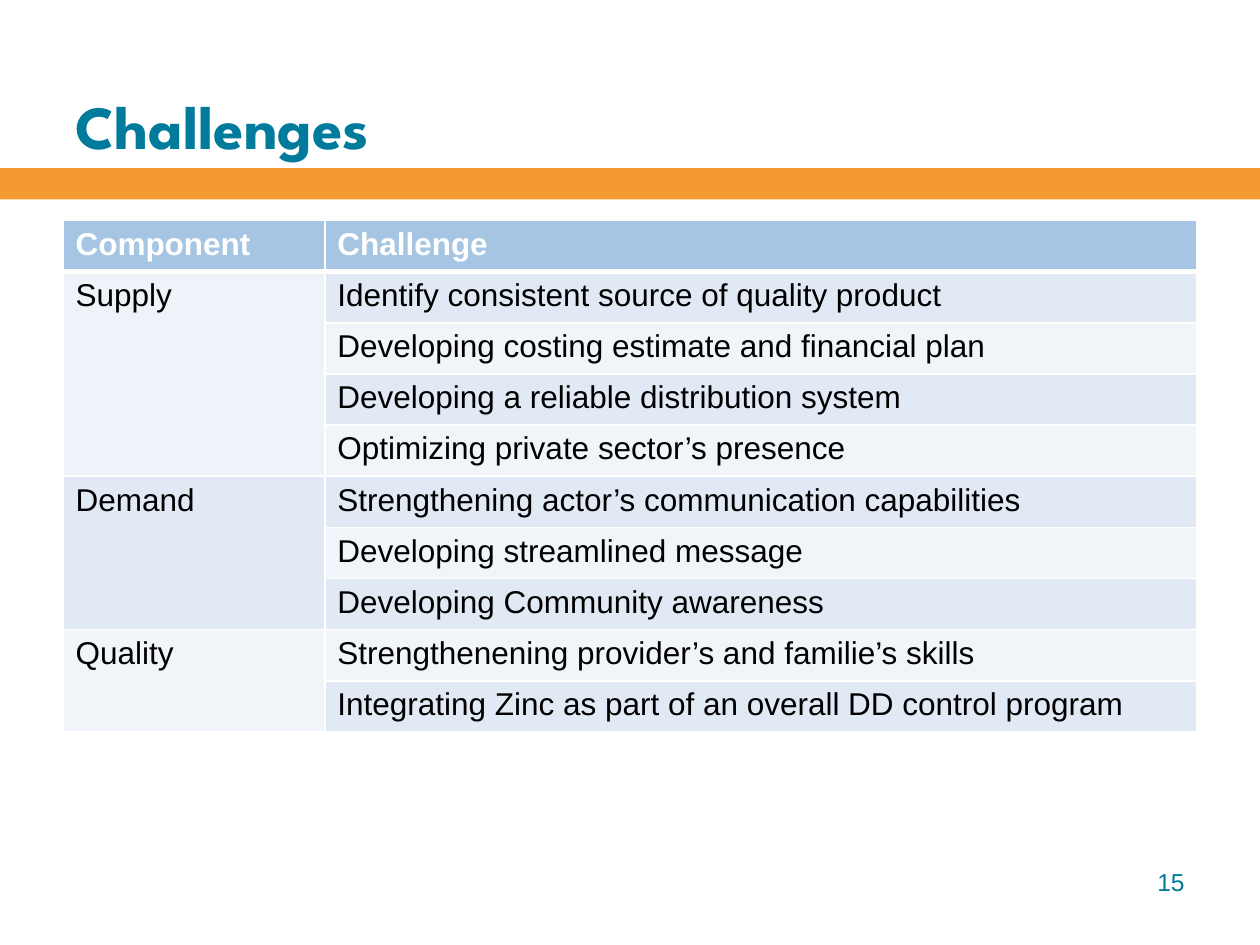
from dataclasses import dataclass

import pptx
import pptx.dml.color
import pptx.enum.shapes
import pptx.enum.text
import pptx.oxml
import pptx.oxml.ns
import pptx.util

Pt = pptx.util.Pt
RGBColor = pptx.dml.color.RGBColor
Anchor = pptx.enum.text.MSO_ANCHOR
Align = pptx.enum.text.PP_ALIGN

WHITE = RGBColor(0xFF, 0xFF, 0xFF)
BLACK = RGBColor(0x00, 0x00, 0x00)
TEAL = RGBColor(0x00, 0x7B, 0x9B)
ORANGE = RGBColor(0xF3, 0x9B, 0x31)
HEADER_BLUE = RGBColor(0xA6, 0xC5, 0xE2)
SUPPLY_BLUE = RGBColor(0xED, 0xF3, 0xF9)
DARK_BAND = RGBColor(0xE1, 0xEA, 0xF4)
LIGHT_BAND = RGBColor(0xF1, 0xF5, 0xFA)

TITLE_FORMAT = {"name": "League Spartan", "size": Pt(35), "bold": True}
NUMBER_FORMAT = {"name": "Arial", "size": Pt(14), "bold": False}
HEADER_FORMAT = {"name": "Arial", "size": Pt(18), "bold": True}
BODY_FORMAT = {**HEADER_FORMAT, "bold": False}

ROW_HEIGHT = 29.23
COLUMN_WIDTHS = (149.6, 498.4)


@dataclass(frozen=True)
class Component:
    name: str
    fill: RGBColor
    challenges: tuple[str, ...]


HEADINGS = ("Component", "Challenge")
COMPONENTS = (
    Component("Supply", SUPPLY_BLUE, (
        "Identify consistent source of quality product",
        "Developing costing estimate and financial plan",
        "Developing a reliable distribution system",
        "Optimizing private sector’s presence",
    )),
    Component("Demand", DARK_BAND, (
        "Strengthening actor’s communication capabilities",
        "Developing streamlined message",
        "Developing Community awareness",
    )),
    Component("Quality", LIGHT_BAND, (
        "Strengthenening provider’s and familie’s skills",
        "Integrating Zinc as part of an overall DD control program",
    )),
)


def write_text(frame, text: str, text_format: dict, color: RGBColor) -> None:
    para = frame.paragraphs[0]
    span = para.add_run()
    span.text = text
    for name, value in text_format.items():
        setattr(span.font, name, value)
    span.font.color.rgb = color


def add_text_box(page, place: tuple[float, ...], text: str, text_format: dict,
                 anchor: Anchor, align: Align) -> None:
    box = page.shapes.add_textbox(*map(Pt, place))
    box.text_frame.word_wrap = True
    box.text_frame.vertical_anchor = anchor
    write_text(box.text_frame, text, text_format, TEAL)
    box.text_frame.paragraphs[0].alignment = align


def set_borders(cell, top: float = 1, bottom: float = 1) -> None:
    """Draw white cell borders, with widths in points."""
    properties = cell._tc.get_or_add_tcPr()
    widths = {"lnL": 1, "lnR": 1, "lnT": top, "lnB": bottom}
    for index, (side, width) in enumerate(widths.items()):
        line = pptx.oxml.parse_xml(
            f'<a:{side} {pptx.oxml.ns.nsdecls("a")} w="{Pt(width)}">'
            f'<a:solidFill><a:srgbClr val="{WHITE}"/></a:solidFill></a:{side}>'
        )
        properties.insert(index, line)


def fill_cell(cell, color: RGBColor) -> None:
    cell.fill.solid()
    cell.fill.fore_color.rgb = color


def add_challenge_table(page) -> None:
    row_count = 1 + sum(len(item.challenges) for item in COMPONENTS)
    table = page.shapes.add_table(
        row_count, len(HEADINGS), Pt(36), Pt(126),
        Pt(sum(COLUMN_WIDTHS)), Pt(row_count * ROW_HEIGHT),
    ).table
    for column, width in zip(table.columns, COLUMN_WIDTHS):
        column.width = Pt(width)
    for row in table.rows:
        row.height = Pt(ROW_HEIGHT)

    for column, heading in enumerate(HEADINGS):
        cell = table.cell(0, column)
        fill_cell(cell, HEADER_BLUE)
        set_borders(cell, bottom=3)
        write_text(cell.text_frame, heading, HEADER_FORMAT, WHITE)

    row = 1
    for component in COMPONENTS:
        first = row
        for challenge in component.challenges:
            band = DARK_BAND if row % 2 else LIGHT_BAND
            for column, color in enumerate((component.fill, band)):
                cell = table.cell(row, column)
                fill_cell(cell, color)
                set_borders(cell, top=3 if row == 1 else 1)
            write_text(table.cell(row, 1).text_frame, challenge, BODY_FORMAT, BLACK)
            row += 1
        name_cell = table.cell(first, 0)
        name_cell.merge(table.cell(row - 1, 0))
        write_text(name_cell.text_frame, component.name, BODY_FORMAT, BLACK)


def main() -> None:
    deck = pptx.Presentation()
    deck.slide_width, deck.slide_height = Pt(720), Pt(540)
    page = deck.slides.add_slide(deck.slide_layouts[6])

    stripe = page.shapes.add_shape(
        pptx.enum.shapes.MSO_SHAPE.RECTANGLE, Pt(0), Pt(96), Pt(720), Pt(18))
    stripe.shadow.inherit = False
    stripe.fill.solid()
    stripe.fill.fore_color.rgb = ORANGE
    stripe.line.fill.background()

    add_text_box(page, (36, 6, 648, 90), "Challenges", TITLE_FORMAT,
                 Anchor.BOTTOM, Align.LEFT)
    add_text_box(page, (516, 492, 168, 37.5), "15", NUMBER_FORMAT,
                 Anchor.TOP, Align.RIGHT)
    add_challenge_table(page)
    deck.save("out.pptx")


if __name__ == "__main__":
    main()
